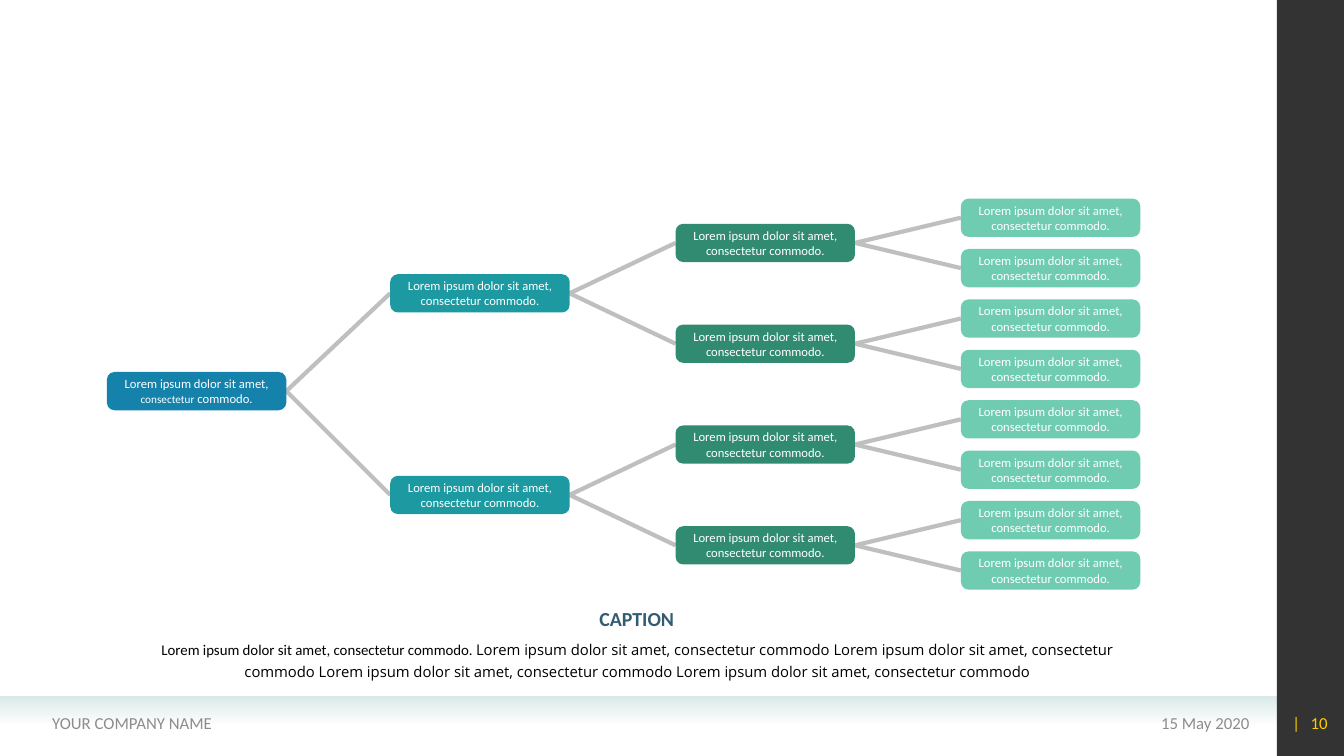
from lxml import etree
from pptx import Presentation
from pptx.dml.color import RGBColor
from pptx.enum.shapes import MSO_CONNECTOR as Connector, MSO_SHAPE as Preset
from pptx.enum.text import MSO_ANCHOR as Anchor, MSO_AUTO_SIZE as AutoSize, PP_ALIGN as Align
from pptx.oxml.ns import qn
from pptx.util import Inches, Pt

WIDTH, HEIGHT = 13.33, 7.5
SIDEBAR_LEFT = WIDTH * 0.95
FOOTER_TOP = HEIGHT * 0.92
FOOTER_TEXT_TOP, FOOTER_TEXT_HEIGHT = 6.97, 0.4
NODE_WIDTH, NODE_HEIGHT = 1.78, 0.38
LEAF_COUNT, FIRST_LEAF_Y, LEAF_PITCH = 8, 2.16, 0.5
LEVELS = [(1.06, "1482AB", -0.03), (3.87, "1D9AA1", 0),
          (6.7, "318B71", 0), (9.53, "70CCB1", 0)]
OPENING = "Lorem ipsum dolor sit amet, "
PHRASE = OPENING + "consectetur commodo"
LEFT_SIDE, RIGHT_SIDE = 1, 3


def rgb(color):
    return RGBColor.from_string(color)


def write(frame, text, size=12, color="8C8C8C", font="Calibri", bold=False,
          align=Align.LEFT, anchor=Anchor.MIDDLE, insets=(0.1, 0.05),
          wrap=True, leading=None, before=0):
    frame.auto_size = AutoSize.NONE
    frame.word_wrap = wrap
    frame.vertical_anchor = anchor
    frame.margin_left = frame.margin_right = Inches(insets[0])
    frame.margin_top = frame.margin_bottom = Inches(insets[1])
    paragraph = frame.paragraphs[0]
    paragraph.alignment = align
    paragraph.space_before = Pt(before)
    if leading:
        paragraph.line_spacing = Pt(leading)
    for words, changes in [(text, {})] if isinstance(text, str) else text:
        run = paragraph.add_run()
        run.text = words
        run.font.size = Pt(changes.get("size", size))
        run.font.name = changes.get("font", font)
        run.font.bold = bold
        run.font.color.rgb = rgb(color)
    return paragraph


def add_label(slide, text, left, top, width, height, **style):
    box = slide.shapes.add_textbox(*map(Inches, (left, top, width, height)))
    return write(box.text_frame, text, **style)


def add_panel(slide, preset, left, top, width, height, color):
    panel = slide.shapes.add_shape(preset, *map(Inches, (left, top, width, height)))
    panel.shadow.inherit = False
    panel.line.fill.background()
    panel.fill.solid()
    panel.fill.fore_color.rgb = rgb(color)
    return panel


def add_node(slide, level, index):
    left, color, nudge = LEVELS[level]
    leaves = LEAF_COUNT / 2 ** level
    middle = FIRST_LEAF_Y + LEAF_PITCH * (leaves * (index + 0.5) - 0.5) + nudge
    node = add_panel(slide, Preset.ROUNDED_RECTANGLE, left,
                     middle - NODE_HEIGHT / 2, NODE_WIDTH, NODE_HEIGHT, color)
    node.adjustments[0] = 0.2
    text = PHRASE + "."
    if level == 0:
        text = [(OPENING, {}), ("consectetur", {"size": 8}), (" commodo.", {})]
    write(node.text_frame, text, size=9, color="FFFFFF",
          align=Align.CENTER, insets=(0.11, 0.02))
    return node


def add_branch(slide, parent, child):
    branch = slide.shapes.add_connector(Connector.STRAIGHT, 0, 0, 0, 0)
    branch.begin_connect(parent, RIGHT_SIDE)
    branch.end_connect(child, LEFT_SIDE)
    branch.line.color.rgb = rgb("BFBFBF")
    branch.line.width = Pt(3)
    etree.SubElement(branch._element.spPr, qn("a:effectLst"))
    slide.shapes._spTree.insert(2, branch._element)


def add_tree(slide):
    parents = []
    for level in range(len(LEVELS)):
        nodes = [add_node(slide, level, index) for index in range(2 ** level)]
        if parents:
            for index, node in enumerate(nodes):
                add_branch(slide, parents[index // 2], node)
        parents = nodes


def add_frame(slide):
    band = add_panel(slide, Preset.RECTANGLE, 0, FOOTER_TOP, SIDEBAR_LEFT, 0.31, "D9E9E8")
    band.fill.gradient()
    band.fill.gradient_angle = 270
    for stop, color in zip(band.fill.gradient_stops, ("D9E9E8", "FFFFFF")):
        stop.color.rgb = rgb(color)
    add_panel(slide, Preset.RECTANGLE, SIDEBAR_LEFT, 0, WIDTH - SIDEBAR_LEFT, HEIGHT, "333333")
    add_label(slide, "15 May 2020", 9.1, FOOTER_TEXT_TOP, 3.39, FOOTER_TEXT_HEIGHT,
              align=Align.RIGHT)
    add_label(slide, "YOUR COMPANY NAME", 0.42, FOOTER_TEXT_TOP, 4.9, FOOTER_TEXT_HEIGHT)
    page = add_label(slide, "|\t10", 12.72, FOOTER_TEXT_TOP, 0.61, FOOTER_TEXT_HEIGHT,
                     color="FFCC00", insets=(0.1, 0.05))
    tabs = etree.SubElement(page._p.get_or_add_pPr(), qn("a:tabLst"))
    etree.SubElement(tabs, qn("a:tab"), pos=str(Inches(0.18)), algn="l")


def add_caption(slide):
    caption = slide.shapes.title
    caption.left, caption.top, caption.width, caption.height = map(
        Inches, (5.82, 5.97, 0.99, 0.34))
    write(caption.text_frame, "CAPTION", size=14.2, color="335B74", bold=True,
          align=Align.CENTER, anchor=Anchor.TOP, wrap=False)
    description = [(PHRASE + ". ", {}), (" ".join([PHRASE] * 4), {"font": "Open Sans"})]
    add_label(slide, description, 1.15, 6.27, 10.34, 0.53, size=10.6, color="000000",
              align=Align.CENTER, anchor=Anchor.TOP, insets=(0.11, 0.05),
              leading=15.5, before=2)


def main():
    deck = Presentation()
    deck.slide_width, deck.slide_height = Inches(WIDTH), Inches(HEIGHT)
    slide = deck.slides.add_slide(deck.slide_layouts[5])
    add_frame(slide)
    add_caption(slide)
    add_tree(slide)
    deck.save("out.pptx")


if __name__ == "__main__":
    main()
